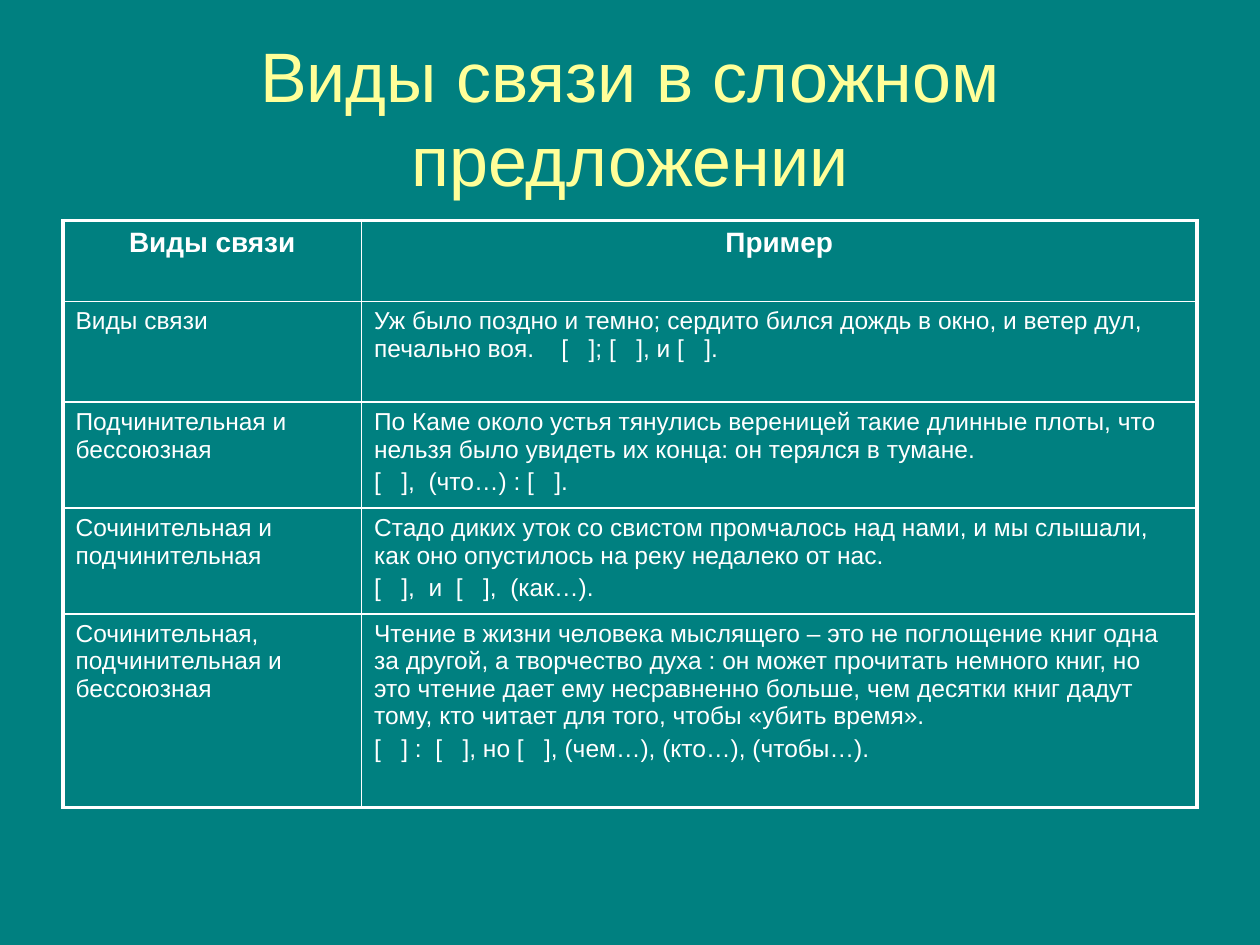
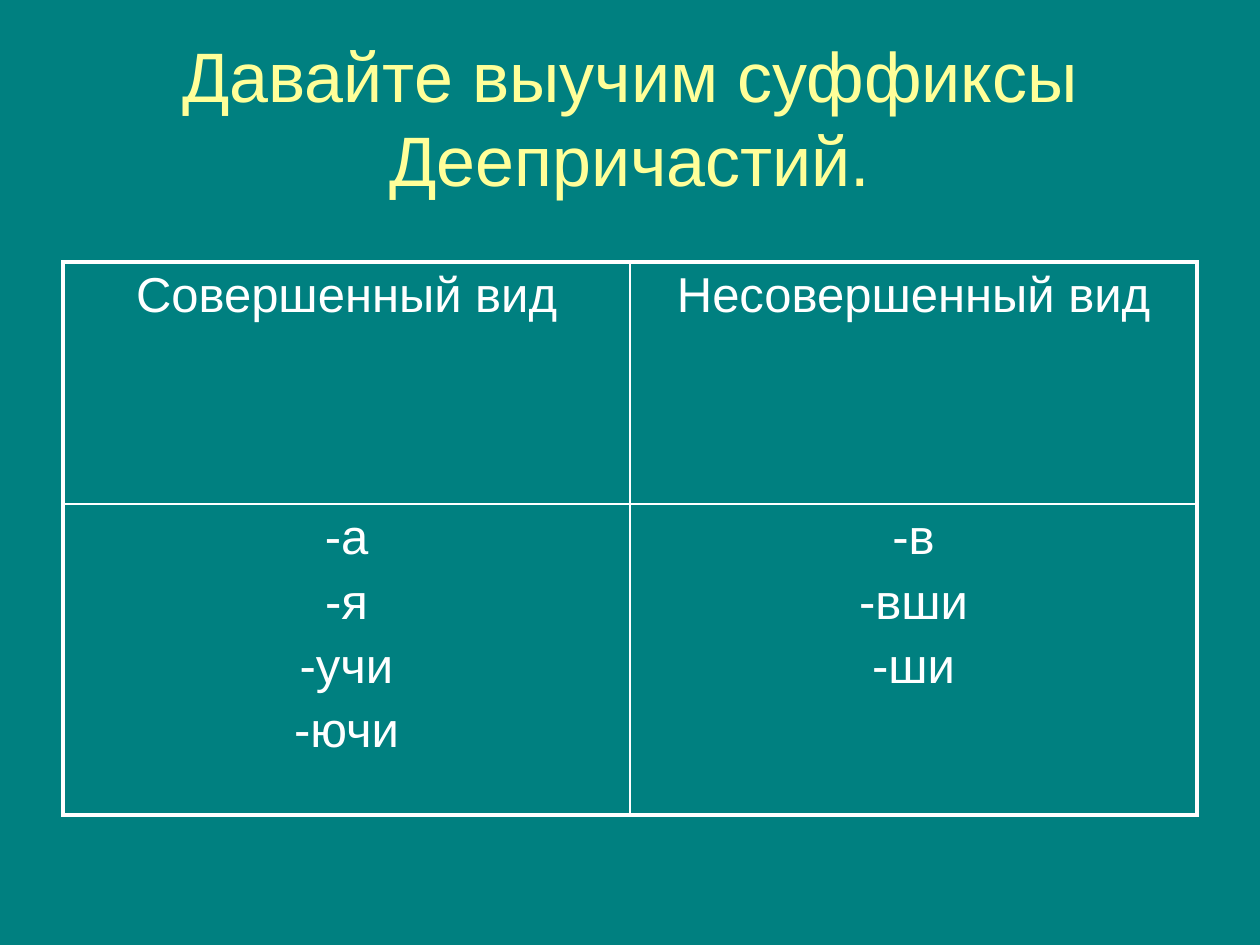
"""Build two Russian grammar slides, each a title over a bordered table."""
import lxml.etree
import pptx
import pptx.dml.color
import pptx.enum.text
import pptx.oxml.ns
import pptx.util

Pt = pptx.util.Pt
TEAL = pptx.dml.color.RGBColor(0x00, 0x80, 0x80)
YELLOW = pptx.dml.color.RGBColor(0xFF, 0xFF, 0x99)
WHITE = pptx.dml.color.RGBColor(0xFF, 0xFF, 0xFF)
FONT = "Arial"
LEFT, WIDTH = 36, 648
OUTER, INNER = 2.21, 0.96
CENTER = pptx.enum.text.PP_ALIGN.CENTER

CONNECTIONS = [
    ("Виды связи", "Пример"),
    ("Виды связи",
     "Уж было поздно и темно; сердито бился дождь в окно, и ветер дул, "
     "печально воя.    [   ]; [   ], и [   ]."),
    ("Подчинительная и бессоюзная",
     "По Каме около устья тянулись вереницей такие длинные плоты, что "
     "нельзя было увидеть их конца: он терялся в тумане.\n"
     "[   ],  (что…) : [   ]."),
    ("Сочинительная и подчинительная",
     "Стадо диких уток со свистом промчалось над нами, и мы слышали, "
     "как оно опустилось на реку недалеко от нас.\n"
     "[   ],  и  [   ],  (как…)."),
    ("Сочинительная, подчинительная и бессоюзная",
     "Чтение в жизни человека мыслящего – это не поглощение книг одна "
     "за другой, а творчество духа : он может прочитать немного книг, но "
     "это чтение дает ему несравненно больше, чем десятки книг дадут "
     "тому, кто читает для того, чтобы «убить время».\n"
     "[   ] :  [   ], но [   ], (чем…), (кто…), (чтобы…)."),
]
SUFFIXES = [
    ("Совершенный вид", "Несовершенный вид"),
    ("-а\n-я\n-учи\n-ючи", "-в\n-вши\n-ши"),
]


def add_run(p, text, size, color, bold=False):
    """Add one formatted run to a paragraph."""
    r = p.add_run()
    r.text = text
    r.font.name = FONT
    r.font.size = Pt(size)
    r.font.bold = bold
    r.font.color.rgb = color


def add_titled_slide(prs, title):
    """Add a slide with a centred yellow title."""
    s = prs.slides.add_slide(prs.slide_layouts[5])
    sp = s.shapes.title
    sp.left, sp.top, sp.width, sp.height = Pt(LEFT), Pt(21.6), Pt(WIDTH), Pt(90)
    tf = sp.text_frame
    tf.word_wrap = True
    tf.auto_size = pptx.enum.text.MSO_AUTO_SIZE.NONE
    tf.vertical_anchor = pptx.enum.text.MSO_ANCHOR.MIDDLE
    p = tf.paragraphs[0]
    p.alignment = CENTER
    p.line_spacing = Pt(48)
    add_run(p, title, 40, YELLOW)
    return s


def set_borders(cell, widths):
    """Draw white cell borders, with widths keyed by side."""
    tc_pr = cell._tc.get_or_add_tcPr()
    qn = pptx.oxml.ns.qn
    for i, side in enumerate("LRTB"):
        ln = lxml.etree.Element(qn(f"a:ln{side}"), w=str(int(Pt(widths[side]))))
        fill = lxml.etree.SubElement(ln, qn("a:solidFill"))
        lxml.etree.SubElement(fill, qn("a:srgbClr"), val=str(WHITE))
        tc_pr.insert(i, ln)


def fill_cell(cell, text, size, centered, bold):
    """Write one paragraph per line of text into an unfilled cell."""
    cell.fill.background()
    tf = cell.text_frame
    for i, line in enumerate(text.split("\n")):
        p = tf.add_paragraph() if i else tf.paragraphs[0]
        p.space_before = Pt(size * 0.2)
        if centered:
            p.alignment = CENTER
        add_run(p, line, size, WHITE, bold)


def add_grid(s, top, col_widths, row_heights, rows, header_size, body_size,
             bold_header=False, center_body=False):
    """Add a table with a heavy outer frame and thin inner lines."""
    last_row, last_col = len(rows) - 1, len(col_widths) - 1
    table = s.shapes.add_table(len(rows), len(col_widths), Pt(LEFT), Pt(top),
                               Pt(WIDTH), Pt(sum(row_heights))).table
    table.first_row = table.horz_banding = False
    for col, width in zip(table.columns, col_widths):
        col.width = Pt(width)
    for i, (height, texts) in enumerate(zip(row_heights, rows)):
        table.rows[i].height = Pt(height)
        header = i == 0
        for j, text in enumerate(texts):
            cell = table.cell(i, j)
            fill_cell(cell, text, header_size if header else body_size,
                      header or center_body, header and bold_header)
            edges = {"L": j == 0, "R": j == last_col, "T": header, "B": i == last_row}
            set_borders(cell, {k: OUTER if v else INNER for k, v in edges.items()})


def main():
    """Build and save the presentation."""
    prs = pptx.Presentation()
    prs.slide_width, prs.slide_height = Pt(720), Pt(540)
    fill = prs.slide_master.background.fill
    fill.solid()
    fill.fore_color.rgb = TEAL

    s = add_titled_slide(prs, "Виды связи в сложном предложении")
    add_grid(s, 126, [170.6, 477.4], [46.2, 57.6, 60.5, 60.5, 110.6],
             CONNECTIONS, 16, 14, bold_header=True)

    s = add_titled_slide(prs, "Давайте выучим суффиксы Деепричастий.")
    add_grid(s, 149.8, [WIDTH / 2] * 2, [138.2, 177.8],
             SUFFIXES, 28, 28, center_body=True)
    prs.save("out.pptx")


if __name__ == "__main__":
    main()
